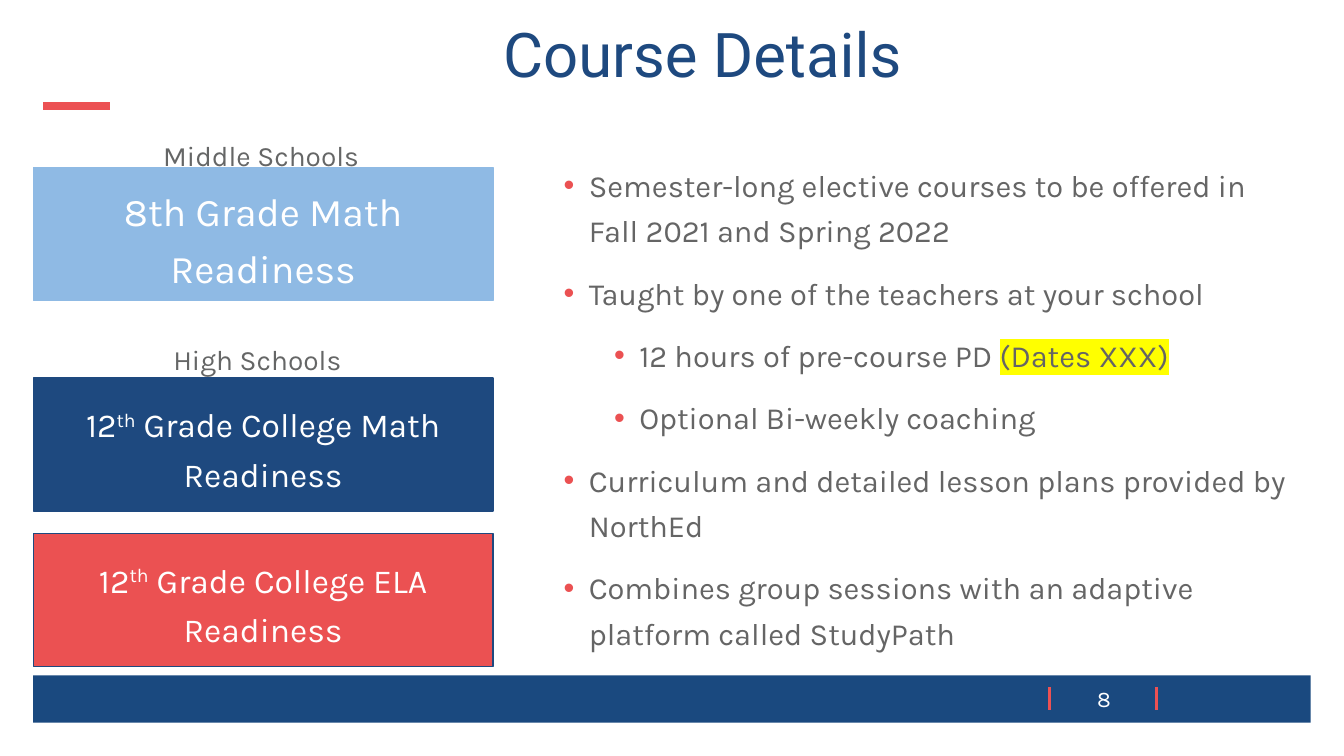
from dataclasses import dataclass

from lxml.etree import SubElement
from pptx import Presentation
from pptx.dml.color import RGBColor
from pptx.enum.shapes import MSO_CONNECTOR, MSO_SHAPE
from pptx.enum.text import MSO_ANCHOR as Anchor, MSO_AUTO_SIZE as Fit, PP_ALIGN as Align
from pptx.oxml import parse_xml
from pptx.oxml.ns import nsdecls, qn
from pptx.util import Inches, Pt


@dataclass(frozen=True)
class Theme:
    navy: str = "1E497F"
    bar: str = "1A497F"
    sky: str = "8FBAE4"
    red: str = "EB5152"
    accent: str = "EC5153"
    gray: str = "656666"
    body: str = "656565"
    white: str = "FFFFFF"
    marker: str = "FFFF00"
    heading_font: str = "Roboto"
    text_font: str = "Karla"
    title_size: int = 44
    large_size: int = 28
    course_size: int = 24
    body_size: int = 22
    label_size: int = 20
    number_size: int = 16


THEME = Theme()

TITLE = "Course Details"
PAGE_NUMBER = "8"
LABELS = [
    ("Middle Schools", 1.52, 1.25, 2.18),
    ("High Schools", 1.62, 3.27, 1.99),
]
COURSES = [
    (["8th Grade Math Readiness"], 1.66, THEME.sky, THEME.sky, THEME.large_size),
    (["12", ("th", "super"), " Grade College Math Readiness"],
     3.75, THEME.navy, THEME.navy, THEME.course_size),
    (["12", ("th", "super"), " Grade College ELA Readiness"],
     5.29, THEME.red, THEME.navy, THEME.course_size),
]
DETAILS = [
    (0, ["Semester-long elective courses to be offered in Fall 2021 and Spring 2022"]),
    (0, ["Taught by one of the teachers at your school"]),
    (1, ["12 hours of pre-course PD ", ("(Dates XXX)", "highlight")]),
    (1, ["Optional Bi-weekly coaching"]),
    (0, ["Curriculum and detailed lesson plans provided by NorthEd"]),
    (0, ["Combines group sessions with an adaptive platform called StudyPath"]),
]

LEFT_EDGE, COURSE_WIDTH, COURSE_HEIGHT = 0.33, 4.56, 1.32
ACCENT_LINES = [
    (0.43, 1.05, 1.09, 1.05, 6),
    (10.41, 6.82, 10.41, 7.04, 2.25),
    (11.47, 6.82, 11.47, 7.04, 2.25),
]


def color(code):
    return RGBColor.from_string(code)


def box(left, top, width, height):
    return [Inches(length) for length in (left, top, width, height)]


def add_bullet(paragraph, level):
    properties = paragraph._p.get_or_add_pPr()
    properties.set("marL", str(Inches(0.75 + 0.5 * level)))
    properties.set("indent", str(Inches(-0.25)))
    bullet_color = SubElement(properties, qn("a:buClr"))
    SubElement(bullet_color, qn("a:srgbClr"), val=THEME.red)
    SubElement(properties, qn("a:buFont"), typeface="Arial")
    SubElement(properties, qn("a:buChar"), char="•")


def write_text(frame, pieces, *, size, ink, font=THEME.text_font, align=Align.LEFT,
               anchor=Anchor.TOP, fit=Fit.NONE, line=1.23, space=6, level=None, first=True):
    frame.word_wrap = True
    frame.auto_size = fit
    frame.vertical_anchor = anchor
    paragraph = frame.paragraphs[0] if first else frame.add_paragraph()
    if level is not None:
        paragraph.level = level
        add_bullet(paragraph, level)
    paragraph.alignment = align
    paragraph.line_spacing = line
    paragraph.space_before = Pt(0 if first else space)
    paragraph.space_after = Pt(space)
    for piece in pieces:
        words, mark = (piece, None) if isinstance(piece, str) else piece
        run = paragraph.add_run()
        run.text = words
        run.font.size = Pt(size)
        run.font.color.rgb = color(ink)
        run.font.name = font
        properties = run._r.get_or_add_rPr()
        if mark == "super":
            properties.set("baseline", "30000")
        elif mark == "highlight":
            properties.find(qn("a:solidFill")).addnext(parse_xml(
                f'<a:highlight {nsdecls("a")}><a:srgbClr val="{THEME.marker}"/></a:highlight>'))


def add_rectangle(slide, place, fill, outline=None):
    rectangle = slide.shapes.add_shape(MSO_SHAPE.RECTANGLE, *box(*place))
    rectangle.shadow.inherit = False
    rectangle.fill.solid()
    rectangle.fill.fore_color.rgb = color(fill)
    if outline:
        rectangle.line.color.rgb = color(outline)
        rectangle.line.width = Pt(1)
    else:
        rectangle.line.fill.background()
    return rectangle


def add_accent(slide, x1, y1, x2, y2, weight):
    accent = slide.shapes.add_connector(MSO_CONNECTOR.STRAIGHT, *box(x1, y1, x2, y2))
    accent.line.color.rgb = color(THEME.accent)
    accent.line.width = Pt(weight)
    SubElement(accent._element.spPr, qn("a:effectLst"))


def place_holder(holder, place):
    holder.left, holder.top, holder.width, holder.height = box(*place)
    return holder.text_frame


def main():
    deck = Presentation()
    deck.slide_width, deck.slide_height = Inches(13.33), Inches(7.5)
    slide = deck.slides.add_slide(deck.slide_layouts[1])

    heading = place_holder(slide.shapes.title, (4.89, 0.19, 8.11, 0.77))
    write_text(heading, [TITLE], size=THEME.title_size, ink=THEME.navy,
               font=THEME.heading_font, anchor=Anchor.MIDDLE, line=0.9, space=0)

    details = place_holder(slide.placeholders[1], (4.99, 1.52, 8.01, 5.23))
    for position, (level, pieces) in enumerate(DETAILS):
        write_text(details, pieces, size=THEME.body_size, ink=THEME.body,
                   level=level, first=position == 0)

    add_rectangle(slide, (LEFT_EDGE, 6.7, 12.67, 0.47), THEME.bar)
    for accent in ACCENT_LINES:
        add_accent(slide, *accent)
    page = slide.shapes.add_textbox(*box(10.63, 6.75, 0.64, 0.37))
    write_text(page.text_frame, [PAGE_NUMBER], size=THEME.number_size, ink=THEME.white,
               align=Align.CENTER, anchor=Anchor.MIDDLE, line=1.0, space=0)

    for pieces, top, fill, outline, size in COURSES:
        course = add_rectangle(slide, (LEFT_EDGE, top, COURSE_WIDTH, COURSE_HEIGHT),
                               fill, outline)
        write_text(course.text_frame, pieces, size=size, ink=THEME.white,
                   align=Align.CENTER, anchor=Anchor.MIDDLE)

    for words, left, top, width in LABELS:
        label = slide.shapes.add_textbox(*box(left, top, width, 0.48))
        write_text(label.text_frame, [words], size=THEME.label_size, ink=THEME.gray,
                   fit=Fit.SHAPE_TO_FIT_TEXT)

    deck.save("out.pptx")


if __name__ == "__main__":
    main()
